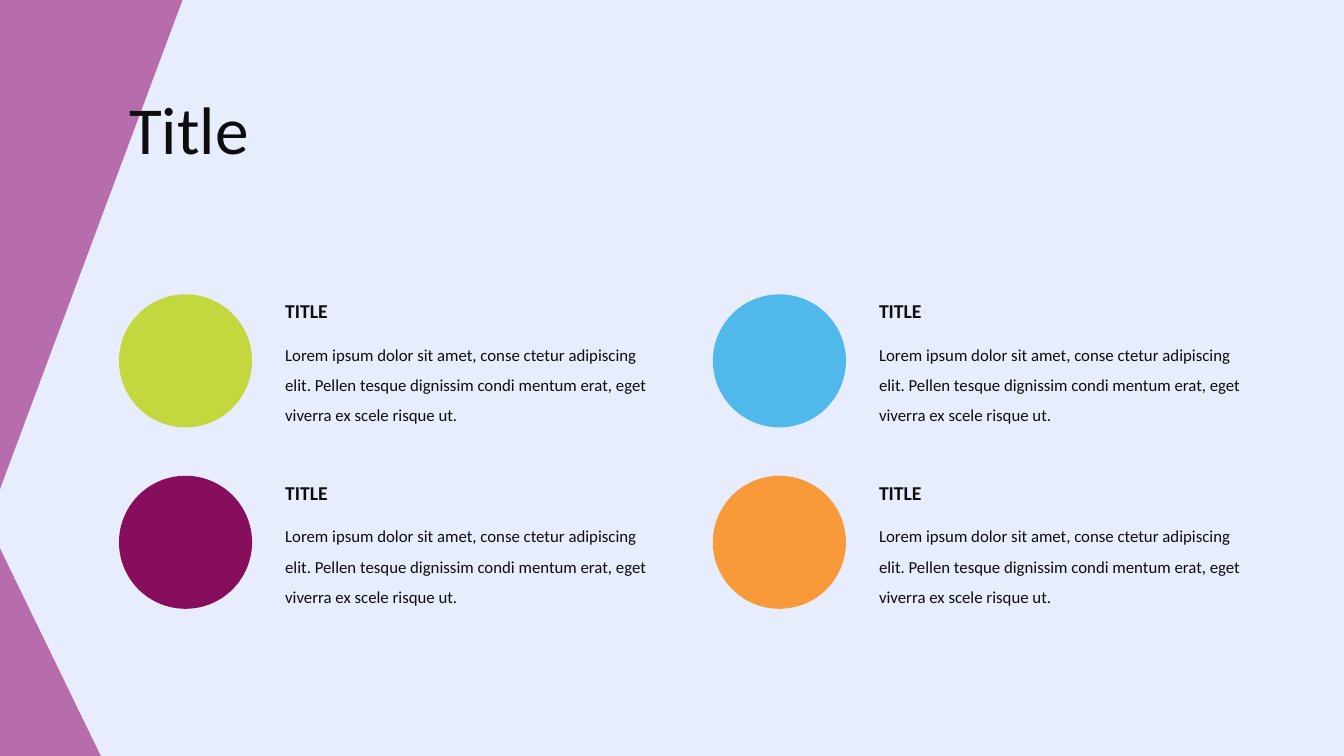
from pptx import Presentation
from pptx.dml.color import RGBColor
from pptx.enum import shapes, text
from pptx.util import Inches, Pt

INK = "0D0D0D"
MAUVE = "B76CAB"
LOREM = ("Lorem ipsum dolor sit amet, conse ctetur adipiscing elit. "
         "Pellen tesque dignissim condi mentum erat, eget viverra ex scele risque ut.")
ITEMS = [("TITLE", LOREM, color) for color in ("C3D83F", "51B8EB", "870E5D", "F89A3A")]


def paint(fill, color):
    fill.solid()
    fill.fore_color.rgb = RGBColor.from_string(color)


def add_form(slide, kind, box, color):
    form = slide.shapes.add_shape(kind, *map(Inches, box))
    form.shadow.inherit = False
    paint(form.fill, color)
    form.line.fill.background()
    return form


def write(shape, words, size, bold=False, spacing=1.0):
    frame = shape.text_frame
    frame.text = words
    frame.word_wrap = True
    frame.auto_size = text.MSO_AUTO_SIZE.SHAPE_TO_FIT_TEXT
    frame.vertical_anchor = text.MSO_ANCHOR.TOP
    para = frame.paragraphs[0]
    para.alignment = text.PP_ALIGN.LEFT
    para.line_spacing = spacing
    font = para.runs[0].font
    font.name, font.size, font.bold = "Calibri", Pt(size), bold
    font.color.rgb = RGBColor.from_string(INK)


def add_edge(slide, height):
    """Draw the two wedges down the left side."""
    kind = shapes.MSO_SHAPE.RIGHT_TRIANGLE
    add_form(slide, kind, (0, 5.44, 1, height - 5.44), MAUVE)
    top = add_form(slide, kind, (0, 0, 1.81, 4.85), MAUVE)
    top.rotation = 180
    top._element.spPr.xfrm.set("flipH", "1")


def add_title(slide, words, box):
    title = slide.shapes.title
    title.left, title.top, title.width, title.height = map(Inches, box)
    write(title, words, 48)
    # Bring the title in front of the wedges
    slide.shapes._spTree.append(title._element)


def add_item(slide, item, left, top):
    head, body, color = item
    add_form(slide, shapes.MSO_SHAPE.OVAL, (left, top, 1.32, 1.32), color)
    column = left + 1.55
    label = slide.shapes.add_textbox(*map(Inches, (column, top, 1.46, 0.34)))
    write(label, head, 14, bold=True)
    note = slide.shapes.add_textbox(*map(Inches, (column, top + 0.35, 3.94, 1.01)))
    write(note, body, 12, spacing=1.5)


def add_grid(slide, items, left, top):
    for index, item in enumerate(items):
        row, col = divmod(index, 2)
        add_item(slide, item, left + col * 5.89, top + row * 1.8)


def main():
    deck = Presentation()
    deck.slide_width, deck.slide_height = Inches(13.33), Inches(7.5)
    slide = deck.slides.add_slide(deck.slide_layouts[5])
    paint(slide.background.fill, "E7EDFD")
    add_edge(slide, 7.5)
    add_title(slide, "Title", (1.18, 0.82, 3.29, 0.91))
    add_grid(slide, ITEMS, 1.18, 2.92)
    deck.save("out.pptx")


if __name__ == "__main__":
    main()
